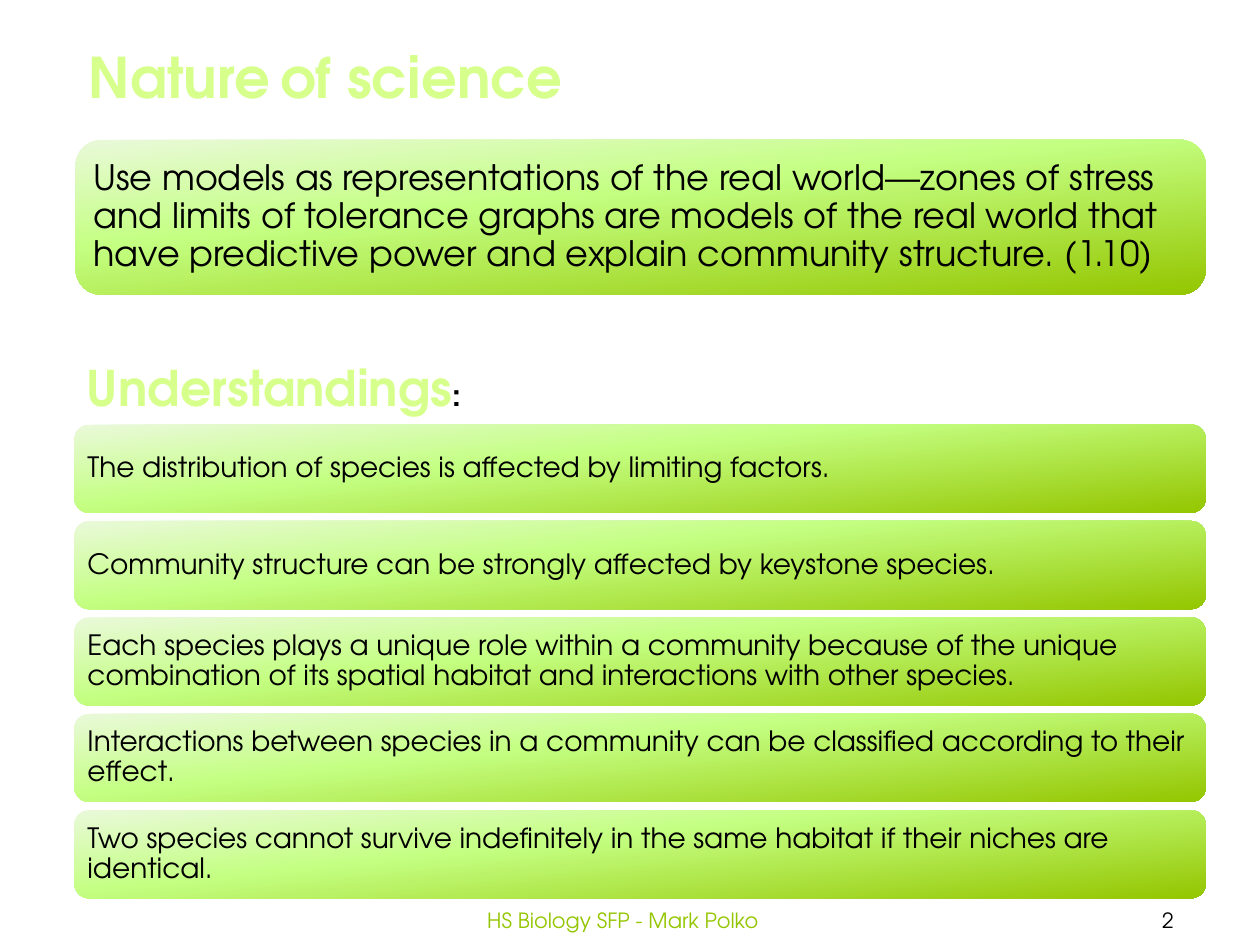
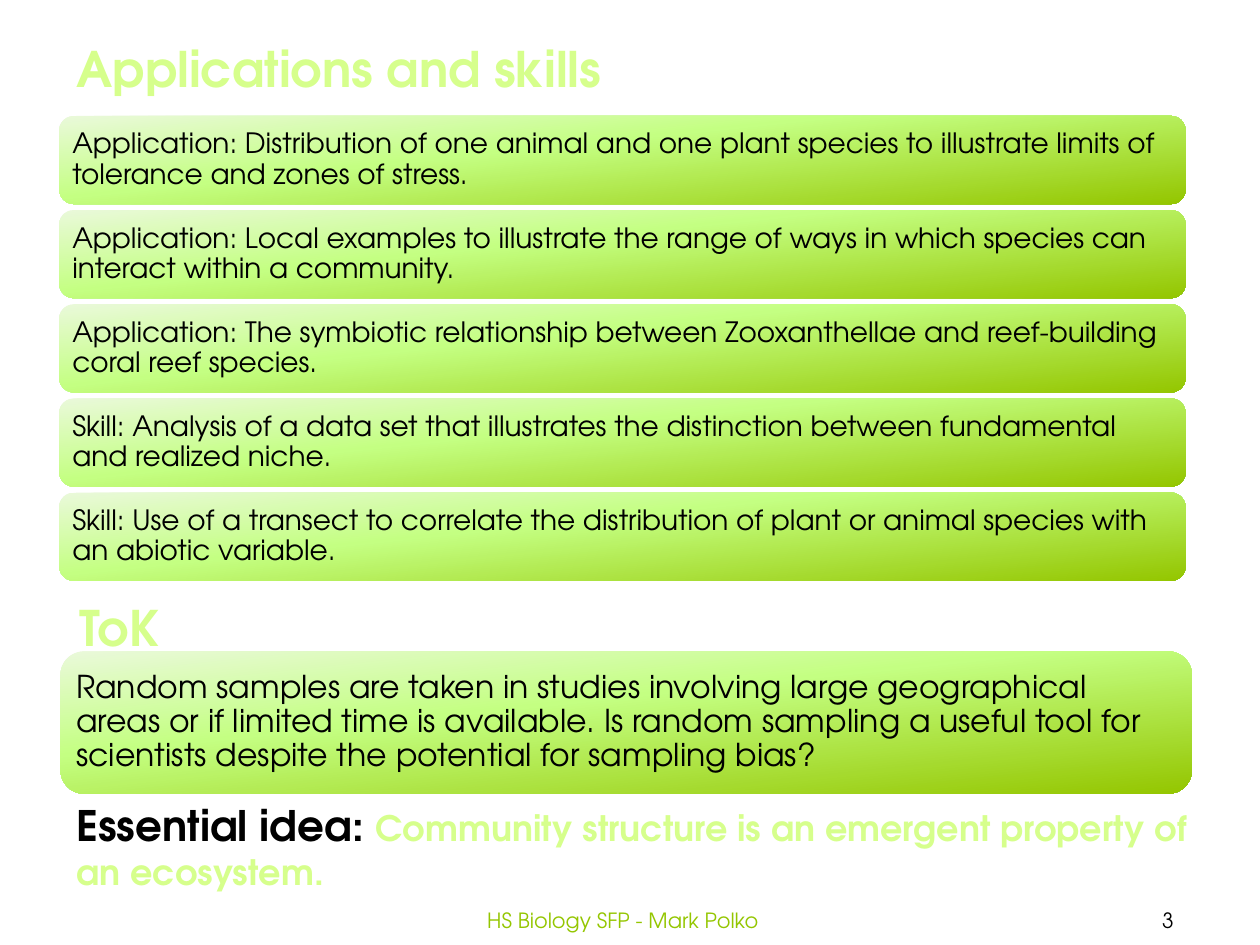
from dataclasses import dataclass

from lxml import etree
from pptx import Presentation
from pptx.dml.color import RGBColor
from pptx.enum.shapes import MSO_SHAPE
from pptx.enum.text import MSO_ANCHOR, MSO_AUTO_SIZE, PP_ALIGN
from pptx.oxml.ns import qn
from pptx.util import Inches, Pt

ROUND = MSO_SHAPE.ROUNDED_RECTANGLE
MIDDLE = MSO_ANCHOR.MIDDLE
GROW = MSO_AUTO_SIZE.SHAPE_TO_FIT_TEXT
LEFT, CENTER = PP_ALIGN.LEFT, PP_ALIGN.CENTER


@dataclass(frozen=True)
class Theme:
    font: str = "TeX Gyre Adventor"
    ink: str = "000000"
    lime: str = "D6FF8C"
    green: str = "94C600"
    edge: str = "434128"
    fade: tuple = ((0, "EAF9DA"), (40, "C4FF82"), (100, "94C600"))
    title: int = 32
    head: int = 28
    lead: int = 24
    large: int = 20
    medium: int = 18
    body: int = 16
    small: int = 12


THEME = Theme()
CARD = 0.7


def place(box):
    return [Inches(n) for n in box]


def add_color(parent, color):
    etree.SubElement(parent, qn("a:srgbClr"), val=color)


def add_run(para, text, size, color, bold=False, edged=False):
    run = para.add_run()
    run.text = text
    font = run.font
    font.name, font.size, font.bold = THEME.font, Pt(size), bold
    font.color.rgb = RGBColor.from_string(color)
    if edged:
        line = etree.Element(qn("a:ln"), w=str(Pt(1)))
        add_color(etree.SubElement(line, qn("a:solidFill")), THEME.edge)
        run._r.get_or_add_rPr().insert(0, line)


def add_fade(shape):
    """Fill a shape with the three-stop green gradient."""
    shape.fill.gradient()
    shape.fill.gradient_angle = 360 - 84
    stops = shape._element.spPr.find(".//" + qn("a:gsLst"))
    for stop in list(stops):
        stops.remove(stop)
    for pos, color in THEME.fade:
        add_color(etree.SubElement(stops, qn("a:gs"), pos=str(pos * 1000)), color)


def add_card(slide, box, text, size=THEME.body, inset=0.07):
    card = slide.shapes.add_shape(ROUND, *place(box))
    card.shadow.inherit = False
    card.line.fill.background()
    add_fade(card)
    frame = card.text_frame
    frame.word_wrap = True
    frame.vertical_anchor = MIDDLE
    frame.margin_left = frame.margin_right = Inches(inset)
    frame.margin_top = frame.margin_bottom = Inches(inset)
    para = frame.paragraphs[0]
    para.alignment, para.line_spacing = LEFT, 0.9
    add_run(para, text, size, THEME.ink)


def add_stack(slide, box, texts):
    """Spread cards evenly from the top to the bottom of the box."""
    left, top, width, height = box
    step = (height - CARD) / (len(texts) - 1)
    for i, text in enumerate(texts):
        add_card(slide, (left, top + i * step, width, CARD), text)


def add_head(slide, box, *runs, wrap=True, align=LEFT):
    """Add a bold heading; each run is (text, size, color, edged)."""
    frame = slide.shapes.add_textbox(*place(box)).text_frame
    frame.word_wrap = wrap
    frame.auto_size = GROW
    para = frame.paragraphs[0]
    para.alignment = align
    for text, size, color, edged in runs:
        add_run(para, text, size, color, True, edged)


def add_foot(slide, number):
    for left, width, text, color in (
        (8.54, 1.46, str(number), THEME.ink),
        (3.03, 3.83, "HS Biology SFP - Mark Polko", THEME.green),
    ):
        frame = slide.shapes.add_textbox(*place((left, 7.1, width, 0.4))).text_frame
        frame.word_wrap = True
        frame.vertical_anchor = MIDDLE
        para = frame.paragraphs[0]
        para.alignment = CENTER
        add_run(para, text, THEME.small, color)


def add_slide(deck, number):
    slide = deck.slides.add_slide(deck.slide_layouts[6])
    add_foot(slide, number)
    return slide


def build_nature(deck):
    slide = add_slide(deck, 2)
    add_stack(slide, (0.59, 3.37, 8.98, 3.76), (
        "The distribution of species is affected by limiting factors.",
        "Community structure can be strongly affected by keystone species.",
        "Each species plays a unique role within a community because of the unique "
        "combination of its spatial habitat and interactions with other species.",
        "Interactions between species in a community can be classified according to "
        "their effect.",
        "Two species cannot survive indefinitely in the same habitat if their niches "
        "are identical.",
    ))
    add_card(
        slide, (0.6, 1.11, 8.97, 1.23),
        "Use models as representations of the real world—zones of stress and limits of "
        "tolerance graphs are models of the real world that have predictive power and "
        "explain community structure. (1.10)",
        THEME.large, 0.08,
    )
    add_head(
        slide, (0.59, 2.79, 3.2, 0.57),
        ("Understandings", THEME.head, THEME.lime, True),
        (":", THEME.medium, THEME.ink, False),
        wrap=False,
    )
    add_head(
        slide, (0.58, 0.29, 4.01, 0.64),
        ("Nature", THEME.title, THEME.lime, True),
        (" ", THEME.large, THEME.ink, False),
        ("of science", THEME.title, THEME.lime, True),
        wrap=False, align=CENTER,
    )


def build_skills(deck):
    slide = add_slide(deck, 3)
    add_stack(slide, (0.47, 0.92, 8.94, 3.69), (
        "Application: Distribution of one animal and one plant species to illustrate "
        "limits of tolerance and zones of stress.",
        "Application: Local examples to illustrate the range of ways in which species "
        "can interact within a community.",
        "Application: The symbiotic relationship between Zooxanthellae and "
        "reef-building coral reef species.",
        "Skill: Analysis of a data set that illustrates the distinction between "
        "fundamental and realized niche.",
        "Skill: Use of a transect to correlate the distribution of plant or animal "
        "species with an abiotic variable.",
    ))
    add_head(slide, (0.51, 0.26, 4.8, 0.57),
             ("Applications and skills", THEME.head, THEME.lime, True))
    add_head(
        slide, (0.51, 6.3, 9.03, 0.84),
        ("Essential idea: ", THEME.lead, THEME.ink, True),
        ("Community structure is an emergent property of an ecosystem.",
         THEME.large, THEME.lime, True),
    )
    add_head(slide, (0.53, 4.69, 4.8, 0.57), ("ToK", THEME.head, THEME.lime, True))
    add_card(
        slide, (0.48, 5.17, 8.98, 1.13),
        "Random samples are taken in studies involving large geographical areas or if "
        "limited time is available. Is random sampling a useful tool for scientists "
        "despite the potential for sampling bias?",
        THEME.medium,
    )


def main():
    deck = Presentation()
    deck.slide_width, deck.slide_height = Inches(10), Inches(7.5)
    build_nature(deck)
    build_skills(deck)
    deck.save("out.pptx")


if __name__ == "__main__":
    main()
